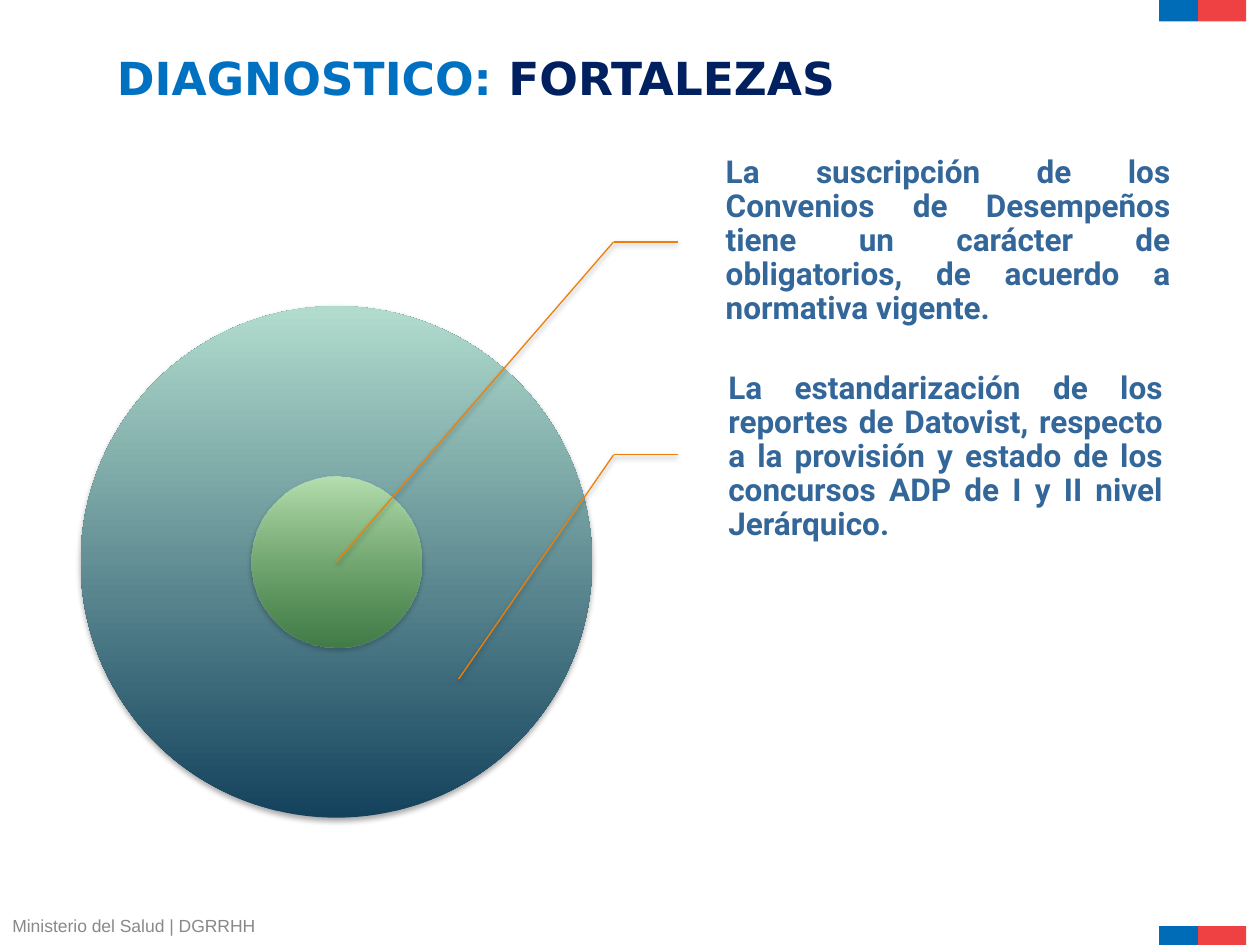
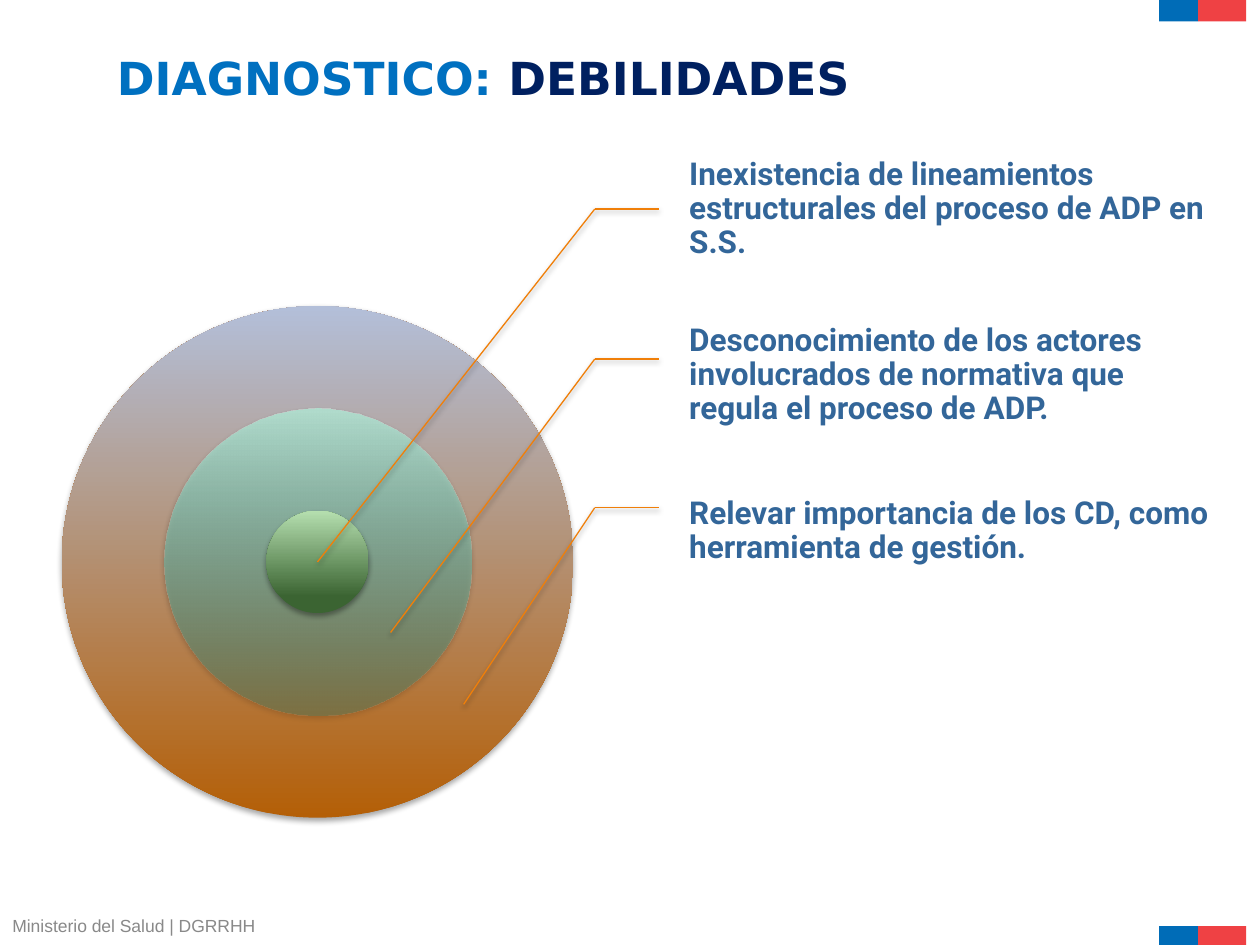
from dataclasses import dataclass
from typing import Optional

from lxml import etree
from pptx import Presentation
from pptx.dml.color import RGBColor
from pptx.enum.shapes import MSO_CONNECTOR as Connector, MSO_SHAPE as Preset
from pptx.enum.text import MSO_ANCHOR as Anchor, MSO_AUTO_SIZE as AutoSize, PP_ALIGN as Align
from pptx.oxml.ns import qn
from pptx.util import Inches, Pt


@dataclass(frozen=True)
class Theme:
    blue: str = "006CB7"
    red: str = "EF4144"
    title: str = "0070C0"
    topic: str = "002060"
    body: str = "336699"
    footer: str = "898989"
    leader: str = "F07F09"
    title_font: str = "DejaVu Sans"
    body_font: str = "Roboto"
    footer_font: str = "Arial"
    title_size: float = 26
    body_size: float = 18
    footer_size: float = 10
    leader_width: float = 0.75


@dataclass(frozen=True)
class Area:
    left: float
    top: float
    width: float
    height: float

    def lengths(self) -> tuple:
        return tuple(Inches(v) for v in (self.left, self.top, self.width, self.height))


@dataclass(frozen=True)
class Ring:
    bottom: str
    top: str
    bottom_alpha: int = 100
    bottom_stop: float = 0


@dataclass(frozen=True)
class Callout:
    text: str
    area: Area
    elbow_y: float
    tip_dx: float
    tip_y: float
    align: Optional[Align] = None


@dataclass(frozen=True)
class Diagnosis:
    topic: str
    title_width: float
    center_x: float
    rings: tuple
    callouts: tuple


THEME = Theme()
TITLE = "DIAGNOSTICO: "
FOOTER = "Ministerio del Salud | DGRRHH"
CENTER_Y = 4.46
TARGET_DIAMETER = 4.06
ELBOW_DX = 2.2
LEADER_LENGTH = 0.51

DIAGNOSES = (
    Diagnosis(
        "FORTALEZAS", 6.22, 2.67,
        (Ring("14425D", "B1DCCD"), Ring("488F38", "B5DFAF", 63)),
        (
            Callout("La suscripción de los Convenios de Desempeños tiene un carácter de "
                    "obligatorios, de acuerdo a normativa vigente.",
                    Area(5.62, 1.07, 3.7, 1.69), 1.92, 0, CENTER_Y, Align.JUSTIFY),
            Callout("La estandarización de los reportes de Datovist, respecto a la provisión "
                    "y estado de los concursos ADP de I y II nivel Jerárquico.",
                    Area(5.64, 2.96, 3.62, 1.34), 3.61, 0.97, 5.39, Align.JUSTIFY),
        ),
    ),
    Diagnosis(
        "DEBILIDADES", 6.44, 2.52,
        (Ring("B45F07", "B3BFD9"), Ring("3B8A73", "B1DCCD", 33),
         Ring("3B6432", "B5DFAF", bottom_stop=0.16)),
        (
            Callout("Inexistencia de lineamientos estructurales del proceso de ADP en S.S.",
                    Area(5.33, 1.07, 4.3, 1.18), 1.66, 0, CENTER_Y),
            Callout("Desconocimiento de los actores involucrados de normativa que regula "
                    "el proceso de ADP.",
                    Area(5.33, 2.39, 4.3, 1.18), 2.85, 0.58, 5.02),
            Callout("Relevar importancia de los CD, como herramienta de gestión.",
                    Area(5.33, 3.63, 4.3, 1.18), 4.03, 1.16, 5.59),
        ),
    ),
)


def add_shadow(shape, alpha: int, distance: float) -> None:
    effects = etree.SubElement(shape._element.spPr, qn("a:effectLst"))
    shadow = etree.SubElement(effects, qn("a:outerShdw"), blurRad=str(Pt(3.1)),
                              dist=str(Pt(distance)), dir="5400000", rotWithShape="0")
    color = etree.SubElement(shadow, qn("a:srgbClr"), val="000000")
    etree.SubElement(color, qn("a:alpha"), val=str(alpha * 1000))


def style_span(span, font: str, size: float, color: str, bold: bool = False) -> None:
    span.font.name = font
    span.font.size = Pt(size)
    span.font.bold = bold
    span.font.color.rgb = RGBColor.from_string(color)


def add_label(page, area: Area):
    box = page.shapes.add_textbox(*area.lengths())
    box.text_frame.word_wrap = False
    box.text_frame.auto_size = AutoSize.SHAPE_TO_FIT_TEXT
    return box.text_frame.paragraphs[0]


def add_flag(page, top: float) -> None:
    for left, width, color in ((9.2, 0.31, THEME.blue), (9.51, 0.38, THEME.red)):
        band = page.shapes.add_shape(Preset.RECTANGLE, *Area(left, top, width, 0.17).lengths())
        band.shadow.inherit = False
        band.fill.solid()
        band.fill.fore_color.rgb = RGBColor.from_string(color)
        band.line.fill.background()


def add_frame(page) -> None:
    for top in (0, 7.35):
        add_flag(page, top)
    para = add_label(page, Area(0, 7.21, 2.13, 0.27))
    para.text = FOOTER
    style_span(para.runs[0], THEME.footer_font, THEME.footer_size, THEME.footer)


def add_title(page, topic: str, width: float) -> None:
    para = add_label(page, Area(0.83, 0.35, width, 0.54))
    for text, color in ((TITLE, THEME.title), (topic, THEME.topic)):
        span = para.add_run()
        span.text = text
        style_span(span, THEME.title_font, THEME.title_size, color, bold=True)


def add_ring(page, ring: Ring, center_x: float, diameter: float) -> None:
    radius = diameter / 2
    area = Area(center_x - radius, CENTER_Y - radius, diameter, diameter)
    disc = page.shapes.add_shape(Preset.OVAL, *area.lengths())
    disc.fill.gradient()
    disc.fill.gradient_angle = 90
    stops = ((ring.bottom_stop, ring.bottom), (1, ring.top))
    for stop, (position, color) in zip(disc.fill.gradient_stops, stops):
        stop.position = position
        stop.color.rgb = RGBColor.from_string(color)
    if ring.bottom_alpha < 100:
        bottom_color = next(disc._element.spPr.iter(qn("a:srgbClr")))
        etree.SubElement(bottom_color, qn("a:alpha"), val=str(ring.bottom_alpha * 1000))
    disc.line.fill.background()
    add_shadow(disc, 35, 1.8)


def add_target(page, rings: tuple, center_x: float) -> None:
    widest = 2 * len(rings) - 1
    for index, ring in enumerate(rings):
        add_ring(page, ring, center_x, TARGET_DIAMETER * (widest - 2 * index) / widest)


def add_callout(page, callout: Callout, center_x: float) -> None:
    box = page.shapes.add_textbox(*callout.area.lengths())
    frame = box.text_frame
    frame.word_wrap = True
    frame.vertical_anchor = Anchor.MIDDLE
    frame.margin_left = Inches(0.14)
    frame.margin_top = frame.margin_right = frame.margin_bottom = Inches(0.03)
    frame.text = callout.text
    para = frame.paragraphs[0]
    para.alignment = callout.align
    para.line_spacing = 0.9
    style_span(para.runs[0], THEME.body_font, THEME.body_size, THEME.body, bold=True)

    elbow_x = center_x + ELBOW_DX
    ends = ((elbow_x + LEADER_LENGTH, callout.elbow_y),
            (center_x + callout.tip_dx, callout.tip_y))
    for end_x, end_y in ends:
        leader = page.shapes.add_connector(
            Connector.STRAIGHT, Inches(elbow_x), Inches(callout.elbow_y),
            Inches(end_x), Inches(end_y))
        leader.line.color.rgb = RGBColor.from_string(THEME.leader)
        leader.line.width = Pt(THEME.leader_width)
        add_shadow(leader, 38, 1.6)


def add_diagnosis(deck, diagnosis: Diagnosis) -> None:
    page = deck.slides.add_slide(deck.slide_layouts[6])
    add_frame(page)
    add_target(page, diagnosis.rings, diagnosis.center_x)
    for callout in diagnosis.callouts:
        add_callout(page, callout, diagnosis.center_x)
    add_title(page, diagnosis.topic, diagnosis.title_width)


def main() -> None:
    deck = Presentation()
    deck.slide_width = Inches(10)
    deck.slide_height = Inches(7.5)
    for diagnosis in DIAGNOSES:
        add_diagnosis(deck, diagnosis)
    deck.save("out.pptx")


if __name__ == "__main__":
    main()
